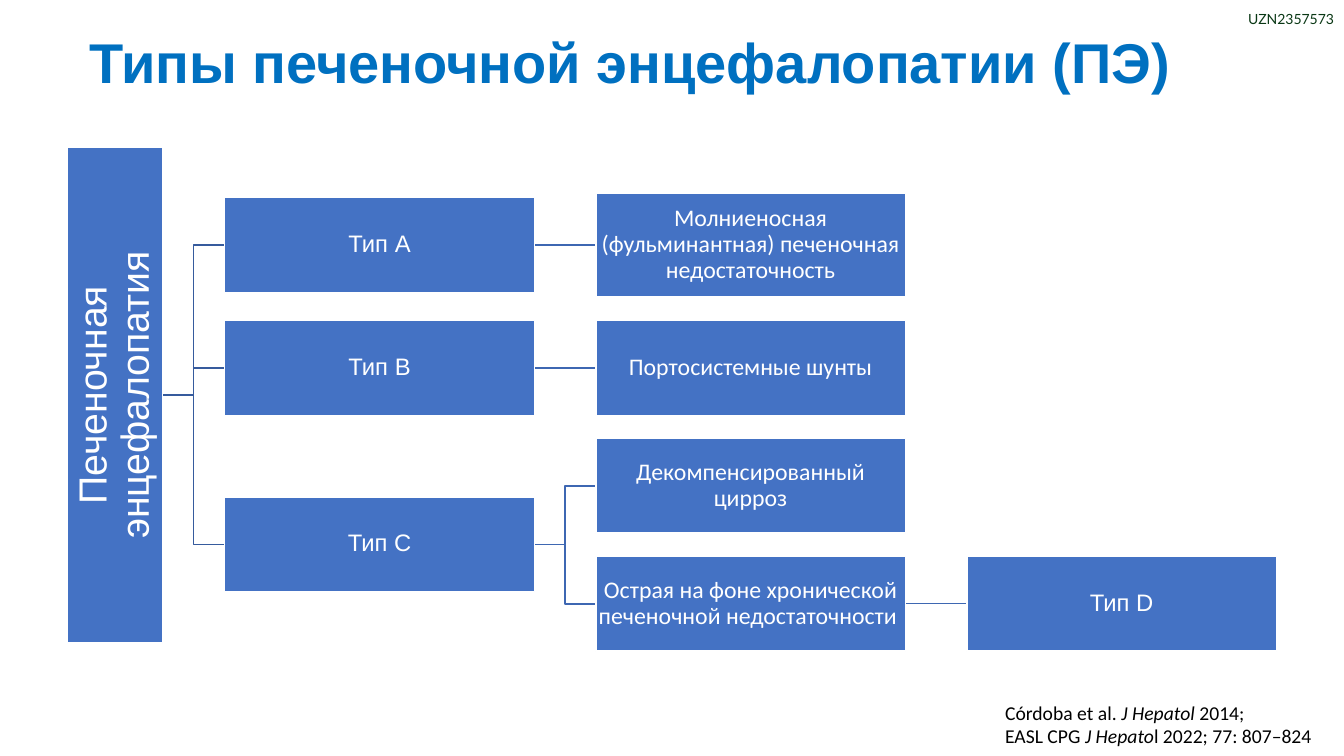
from dataclasses import dataclass

import pptx
import pptx.dml.color
import pptx.enum.shapes
import pptx.enum.text
import pptx.oxml
import pptx.util
from pptx.util import Inches

PP = pptx.enum.text.PP_ALIGN
ANCHOR = pptx.enum.text.MSO_ANCHOR
CONNECTOR = pptx.enum.shapes.MSO_CONNECTOR
RECT = pptx.enum.shapes.MSO_SHAPE.RECTANGLE
LEFT, RIGHT = 1, 3


@dataclass(frozen=True)
class Theme:
    title: str = "0070C0"
    box: str = "4472C4"
    white: str = "FFFFFF"
    black: str = "000000"
    code: str = "0A3815"
    trunk: str = "365B9D"
    branch: str = "3E67B2"
    title_size: int = 40
    root_size: int = 28
    box_size: int = 17
    source_size: int = 14
    code_size: int = 10
    heading_font: str = "Arial"
    body_font: str = "Calibri"
    code_font: str = "Lato"


THEME = Theme()
BOX_W, BOX_H = 3.07, 0.94
COLUMN_STEP = 3.68

# name: (label, column, centre below the diagram's top, height, font)
NODES = {
    "A": ("Тип A", 0, 0.97, BOX_H, THEME.heading_font),
    "fulminant": ("Молниеносная (фульминантная) печеночная недостаточность",
                  1, 0.97, 1.02, THEME.body_font),
    "B": ("Тип B", 0, 2.19, BOX_H, THEME.heading_font),
    "shunts": ("Портосистемные шунты", 1, 2.19, BOX_H, THEME.body_font),
    "C": ("Тип C", 0, 3.94, BOX_H, THEME.heading_font),
    "cirrhosis": ("Декомпенсированный цирроз", 1, 3.36, BOX_H, THEME.body_font),
    "acute": ("Острая на фоне хронической печеночной недостаточности ",
              1, 4.53, BOX_H, THEME.body_font),
    "D": ("Тип D", 2, 4.53, BOX_H, THEME.heading_font),
}
LINKS = [("A", "fulminant"), ("B", "shunts"), ("C", "cirrhosis"),
         ("C", "acute"), ("acute", "D")]


def rgb(value):
    return pptx.dml.color.RGBColor.from_string(value)


def set_attributes(target, values):
    for name, value in values.items():
        setattr(target, name, value)


def add_run(p, text, size, font, color, **values):
    r = p.add_run()
    r.text = text
    set_attributes(r.font, {"size": pptx.util.Pt(size), "name": font, **values})
    r.font.color.rgb = rgb(color)


def add_text_box(slide, box, **frame):
    tf = slide.shapes.add_textbox(*map(Inches, box)).text_frame
    set_attributes(tf, {"word_wrap": True, **frame})
    return tf


def add_node(slide, box, label, size, font, inset):
    sp = slide.shapes.add_shape(RECT, *map(Inches, box))
    sp.shadow.inherit = False
    sp.fill.solid()
    sp.fill.fore_color.rgb = rgb(THEME.box)
    sp.line.color.rgb = rgb(THEME.white)
    sp.line.width = pptx.util.Pt(1)
    tf = sp.text_frame
    margins = {f"margin_{side}": Inches(inset)
               for side in ("left", "top", "right", "bottom")}
    set_attributes(tf, {"word_wrap": True, "vertical_anchor": ANCHOR.MIDDLE, **margins})
    p = tf.paragraphs[0]
    set_attributes(p, {"alignment": PP.CENTER, "line_spacing": 0.9})
    add_run(p, label, size, font, THEME.white)
    return sp


def add_link(slide, start, end, color):
    """Draw a line between two points behind the boxes, bent if their heights differ."""
    kind = CONNECTOR.STRAIGHT if start[1] == end[1] else CONNECTOR.ELBOW
    line = slide.shapes.add_connector(kind, *start, *end)
    line.line.color.rgb = rgb(color)
    line.line.width = pptx.util.Pt(1)
    sp_pr = line._element.spPr
    sp_pr.append(sp_pr.makeelement(pptx.oxml.ns.qn("a:effectLst"), {}))
    slide.shapes._spTree.insert(2, line._element)
    return line


def left_middle(sp):
    return sp.left, sp.top + sp.height // 2


def right_middle(sp):
    return sp.left + sp.width, sp.top + sp.height // 2


def draw_title(slide, box):
    p = add_text_box(slide, box, vertical_anchor=ANCHOR.MIDDLE).paragraphs[0]
    p.alignment = PP.CENTER
    add_run(p, "Типы печеночной энцефалопатии (ПЭ)", THEME.title_size,
            THEME.heading_font, THEME.title, bold=True)


def draw_diagram(slide, box):
    left, top, _, height = box
    root_right, root_middle = left + BOX_H, top + height / 2
    root = add_node(slide, (left + (BOX_H - height) / 2, root_middle - BOX_H / 2,
                            height, BOX_H),
                    "Печеночная энцефалопатия", THEME.root_size,
                    THEME.heading_font, 0.02)
    root.rotation = 270

    nodes = {}
    for name, (label, column, centre, node_h, font) in NODES.items():
        x = left + 1.56 + column * COLUMN_STEP
        nodes[name] = add_node(slide, (x, top + centre - node_h / 2, BOX_W, node_h),
                               label, THEME.box_size, font, 0.01)

    for name in "ABC":
        add_link(slide, (Inches(root_right), Inches(root_middle)),
                 left_middle(nodes[name]), THEME.trunk)
    for source, target in LINKS:
        start, end = nodes[source], nodes[target]
        line = add_link(slide, right_middle(start), left_middle(end), THEME.branch)
        line.begin_connect(start, RIGHT)
        line.end_connect(end, LEFT)


def draw_sources(slide, box):
    tf = add_text_box(slide, box, word_wrap=False)
    lines = [("Córdoba et al. ", "J Hepatol ", "2014;"),
             ("EASL CPG ", "J Hepato", "l 2022; 77: 807–824")]
    for i, parts in enumerate(lines):
        p = tf.add_paragraph() if i else tf.paragraphs[0]
        for j, text in enumerate(parts):
            add_run(p, text, THEME.source_size, THEME.body_font, THEME.black,
                    italic=j == 1)


def draw_code(slide, box):
    p = add_text_box(slide, box).paragraphs[0]
    add_run(p, "UZN2357573", THEME.code_size, THEME.code_font, THEME.code)


def main():
    prs = pptx.Presentation()
    set_attributes(prs, {"slide_width": Inches(13.33), "slide_height": Inches(7.5)})
    slide = prs.slides.add_slide(prs.slide_layouts[6])
    draw_title(slide, (0.68, 0.22, 11.13, 0.77))
    draw_sources(slide, (9.87, 6.9, 3.27, 1.04))
    draw_diagram(slide, (0.67, 1.46, 11.99, 4.92))
    draw_code(slide, (12.28, 0.06, 1.49, 0.27))
    prs.save("out.pptx")


if __name__ == "__main__":
    main()
